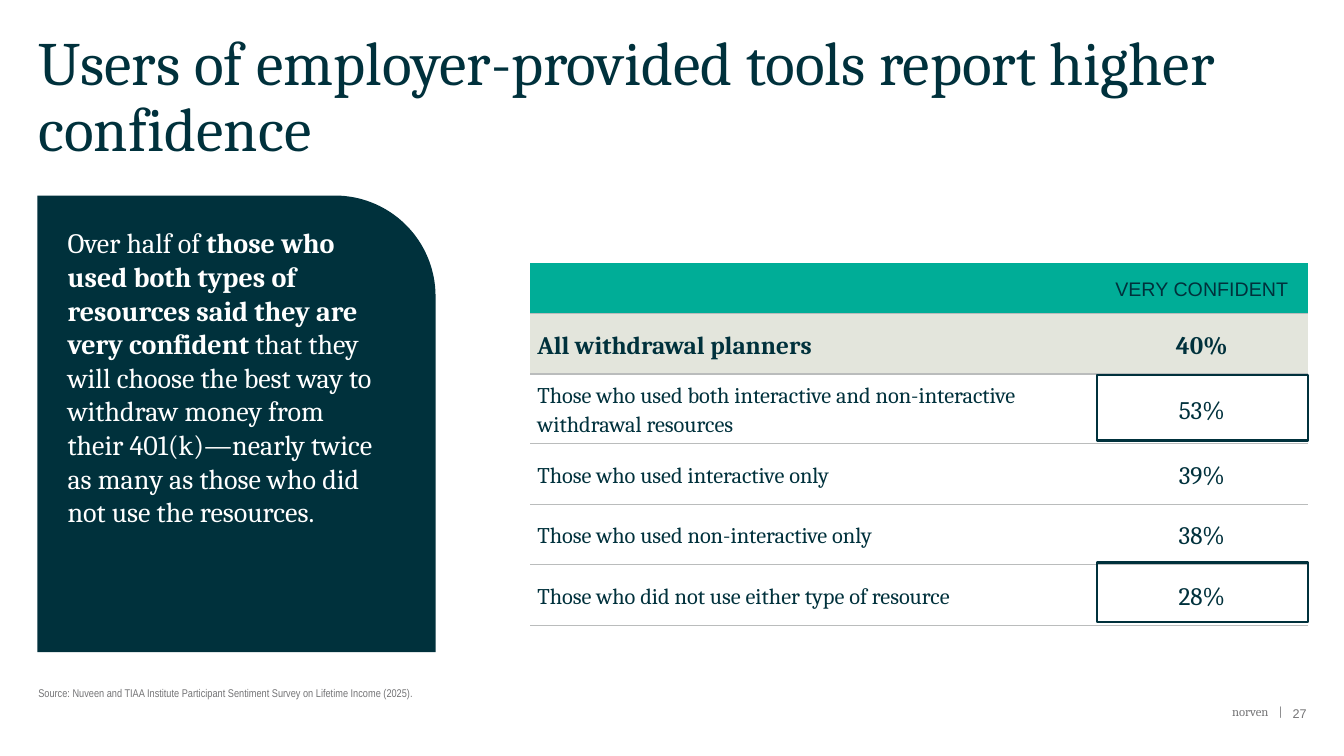
from lxml.etree import SubElement
from pptx import Presentation
from pptx.dml.color import RGBColor
from pptx.enum.shapes import MSO_SHAPE as Preset
from pptx.enum.text import MSO_ANCHOR as Anchor, PP_ALIGN as Align
from pptx.oxml.ns import qn
from pptx.util import Inches, Pt

NAVY = RGBColor(0x00, 0x31, 0x3C)
TEAL = RGBColor(0x00, 0xAD, 0x97)
SAND = RGBColor(0xE3, 0xE5, 0xDC)
RULE = RGBColor(0xBA, 0xBC, 0xBC)
GRAY = RGBColor(0x74, 0x74, 0x76)
WHITE = RGBColor(0xFF, 0xFF, 0xFF)

GROUPS = [
    ("", "VERY CONFIDENT"),
    ("All withdrawal planners", "40%"),
    ("Those who used both interactive and non-interactive withdrawal resources", "53%"),
    ("Those who used interactive only", "39%"),
    ("Those who used non-interactive only", "38%"),
    ("Those who did not use either type of resource", "28%"),
]
ROW_HEIGHTS = [0.5, 0.6, 0.66, 0.6, 0.6, 0.6]
COLUMN_WIDTHS = [5.61, 2.1]
ROW_FILLS = {0: TEAL, 1: SAND}
HIGHLIGHTED_ROWS = (2, 5)


def write(frame, runs, size=18, color=NAVY, font="Cambria", align=Align.LEFT,
          anchor=Anchor.TOP, spacing=None, after=0, inset=0):
    """Fill a text frame with one paragraph of (text, bold) runs."""
    frame.word_wrap = True
    frame.vertical_anchor = anchor
    frame.margin_left = frame.margin_right = Inches(inset)
    frame.margin_top = frame.margin_bottom = Inches(inset)
    paragraph = frame.paragraphs[0]
    paragraph.alignment = align
    paragraph.line_spacing = spacing
    paragraph.space_after = Pt(after)
    for text, bold in runs:
        run = paragraph.add_run()
        run.text = text
        run.font.bold = bold
        run.font.size = Pt(size)
        run.font.name = font
        run.font.color.rgb = color


def add_label(slide, text, left, top, width, height, **style):
    """Add a text box holding one plain run."""
    box = slide.shapes.add_textbox(Inches(left), Inches(top), Inches(width), Inches(height))
    write(box.text_frame, [(text, False)], **style)


def add_takeaway(slide, left, top, width, height):
    """Add the dark panel with the main finding."""
    panel = slide.shapes.add_shape(Preset.ROUND_1_RECTANGLE, Inches(left), Inches(top),
                                   Inches(width), Inches(height))
    panel.shadow.inherit = False
    panel.adjustments[0] = 0.253
    panel.fill.solid()
    panel.fill.fore_color.rgb = NAVY
    panel.line.fill.background()
    write(panel.text_frame, [
        ("Over half of ", False),
        ("those who used both types of resources said they are very confident ", True),
        ("that they will choose the best way to withdraw money from their 401(k)—nearly "
         "twice as many as those who did not use the resources.", False),
    ], size=20, color=WHITE, after=10.3, inset=0.3)


def set_borders(cell, ruled_sides):
    """Draw thin rules on the given sides of a cell and clear the others."""
    properties = cell._tc.get_or_add_tcPr()
    for side in "LRTB":
        line = SubElement(properties, qn(f"a:ln{side}"), w=str(Pt(1)))
        if side in ruled_sides:
            fill = SubElement(line, qn("a:solidFill"))
            SubElement(fill, qn("a:srgbClr"), val=str(RULE))
        else:
            SubElement(line, qn("a:noFill"))


def fill_cell(cell, text, row, column):
    """Format one table cell according to its row and column."""
    set_borders(cell, "TB" if row else "B")
    if row in ROW_FILLS:
        cell.fill.solid()
        cell.fill.fore_color.rgb = ROW_FILLS[row]
    else:
        cell.fill.background()
    if text:
        size = 14 if row == 0 else 18 if row == 1 or column else 16
        write(cell.text_frame, [(text, row == 1)], size=size,
              font="Cambria" if row else "Arial",
              align=Align.CENTER if column else Align.LEFT, spacing=1.15, after=9)
    cell.vertical_anchor = Anchor.MIDDLE
    cell.margin_left = cell.margin_right = Inches(0.07)
    cell.margin_top = cell.margin_bottom = Inches(0.04)


def add_confidence_table(slide, left, top):
    """Add the confidence table and frame its highlighted values."""
    table = slide.shapes.add_table(
        len(GROUPS), len(COLUMN_WIDTHS), Inches(left), Inches(top),
        Inches(sum(COLUMN_WIDTHS)), Inches(sum(ROW_HEIGHTS))).table
    table.first_row = table.horz_banding = False
    for column, width in zip(table.columns, COLUMN_WIDTHS):
        column.width = Inches(width)
    for row, height in enumerate(ROW_HEIGHTS):
        table.rows[row].height = Inches(height)
        for column, text in enumerate(GROUPS[row]):
            fill_cell(table.cell(row, column), text, row, column)
    for row in HIGHLIGHTED_ROWS:
        highlight = slide.shapes.add_shape(
            Preset.RECTANGLE, Inches(left + COLUMN_WIDTHS[0] + 0.01),
            Inches(top + sum(ROW_HEIGHTS[:row]) + 0.01),
            Inches(COLUMN_WIDTHS[1] - 0.01), Inches(ROW_HEIGHTS[row] - 0.01))
        highlight.shadow.inherit = False
        highlight.fill.background()
        highlight.line.color.rgb = NAVY
        highlight.line.width = Pt(1.5)


def add_footer(slide, left, top):
    """Add the company name, divider and page number."""
    style = dict(size=9, color=GRAY, align=Align.RIGHT)
    add_label(slide, "norven", left, top, 0.67, 0.2, **style)
    add_label(slide, "|", left + 0.67, top, 0.14, 0.2, **style)
    add_label(slide, "27", left + 0.71, top + 0.02, 0.34, 0.4, font="Arial", **style)


def main():
    """Build the slide and save it."""
    deck = Presentation()
    deck.slide_width, deck.slide_height = Inches(13.33), Inches(7.5)
    slide = deck.slides.add_slide(deck.slide_layouts[6])
    add_label(slide, "Users of employer-provided tools report higher confidence",
              0.38, 0.32, 12.6, 1.34, size=44, spacing=0.9)
    add_takeaway(slide, 0.37, 1.94, 3.95, 4.53)
    add_confidence_table(slide, 5.26, 2.61)
    add_label(slide, "Source: Nuveen and TIAA Institute Participant Sentiment Survey "
              "on Lifetime Income (2025).", 0.38, 6.54, 12.6, 0.4,
              size=8, color=GRAY, font="Arial Narrow", anchor=Anchor.BOTTOM)
    add_footer(slide, 11.91, 6.98)
    deck.save("out.pptx")


if __name__ == "__main__":
    main()
